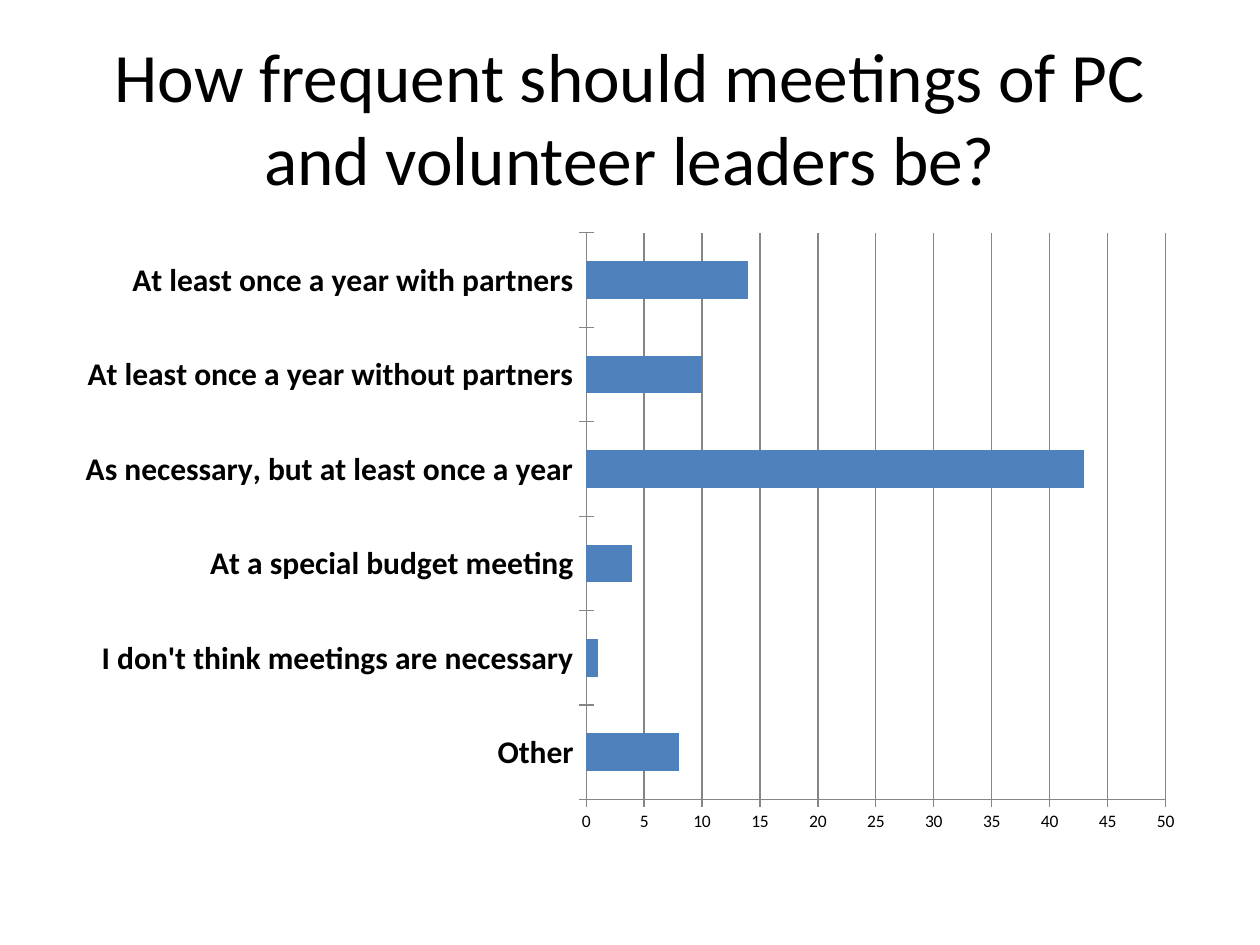
from pptx import Presentation, util as u
from pptx.chart.data import CategoryChartData
from pptx.dml.color import RGBColor
from pptx.enum import chart as ch, text

TITLE = "How frequent should meetings of PC and volunteer leaders be?"
ANSWERS = [
    ("Other", 8),
    ("I don't think meetings are necessary", 1),
    ("At a special budget meeting", 4),
    ("As necessary, but at least once a year", 43),
    ("At least once a year without partners", 10),
    ("At least once a year with partners", 14),
]
FONT = "Calibri"
BLACK = RGBColor(0x00, 0x00, 0x00)
BLUE = RGBColor(0x4F, 0x81, 0xBD)
GRAY = RGBColor(0x86, 0x86, 0x86)


def style_font(font, size, bold=False):
    font.name, font.size, font.bold = FONT, u.Pt(size), bold
    font.color.rgb = BLACK


def style_line(line):
    line.color.rgb = GRAY
    line.width = u.Pt(0.75)


def add_title(s):
    sp = s.shapes.title
    sp.left, sp.top, sp.width, sp.height = map(u.Inches, (0.5, 0.3, 9, 1.25))
    tf = sp.text_frame
    tf.text = TITLE
    tf.word_wrap = True
    tf.auto_size = text.MSO_AUTO_SIZE.NONE
    tf.vertical_anchor = text.MSO_ANCHOR.MIDDLE
    p = tf.paragraphs[0]
    p.alignment = text.PP_ALIGN.CENTER
    style_font(p.runs[0].font, 39.6)


def add_answer_chart(s):
    data = CategoryChartData()
    data.categories = [answer for answer, _ in ANSWERS]
    data.add_series("Series 1", [votes for _, votes in ANSWERS])
    chart = s.shapes.add_chart(
        ch.XL_CHART_TYPE.BAR_CLUSTERED,
        *map(u.Inches, (0.5, 1.75, 9, 4.95)), data).chart
    chart.has_legend = False
    chart.has_title = False
    style_font(chart.font, 10)

    plot = chart.plots[0]
    plot.gap_width = 150
    plot.vary_by_categories = False
    fill = plot.series[0].format.fill
    fill.solid()
    fill.fore_color.rgb = BLUE

    for axis, size, bold in ((chart.category_axis, 18, True),
                             (chart.value_axis, 10, False)):
        axis.major_tick_mark = ch.XL_TICK_MARK.CROSS
        axis.minor_tick_mark = ch.XL_TICK_MARK.NONE
        style_font(axis.tick_labels.font, size, bold)
        style_line(axis.format.line)
    values = chart.value_axis
    values.minimum_scale, values.maximum_scale, values.major_unit = 0, 50, 5
    values.has_major_gridlines = True
    style_line(values.major_gridlines.format.line)


def main():
    prs = Presentation()
    prs.slide_width, prs.slide_height = u.Inches(10), u.Inches(7.5)
    s = prs.slides.add_slide(prs.slide_layouts[5])
    add_title(s)
    add_answer_chart(s)
    prs.save("out.pptx")


if __name__ == "__main__":
    main()
